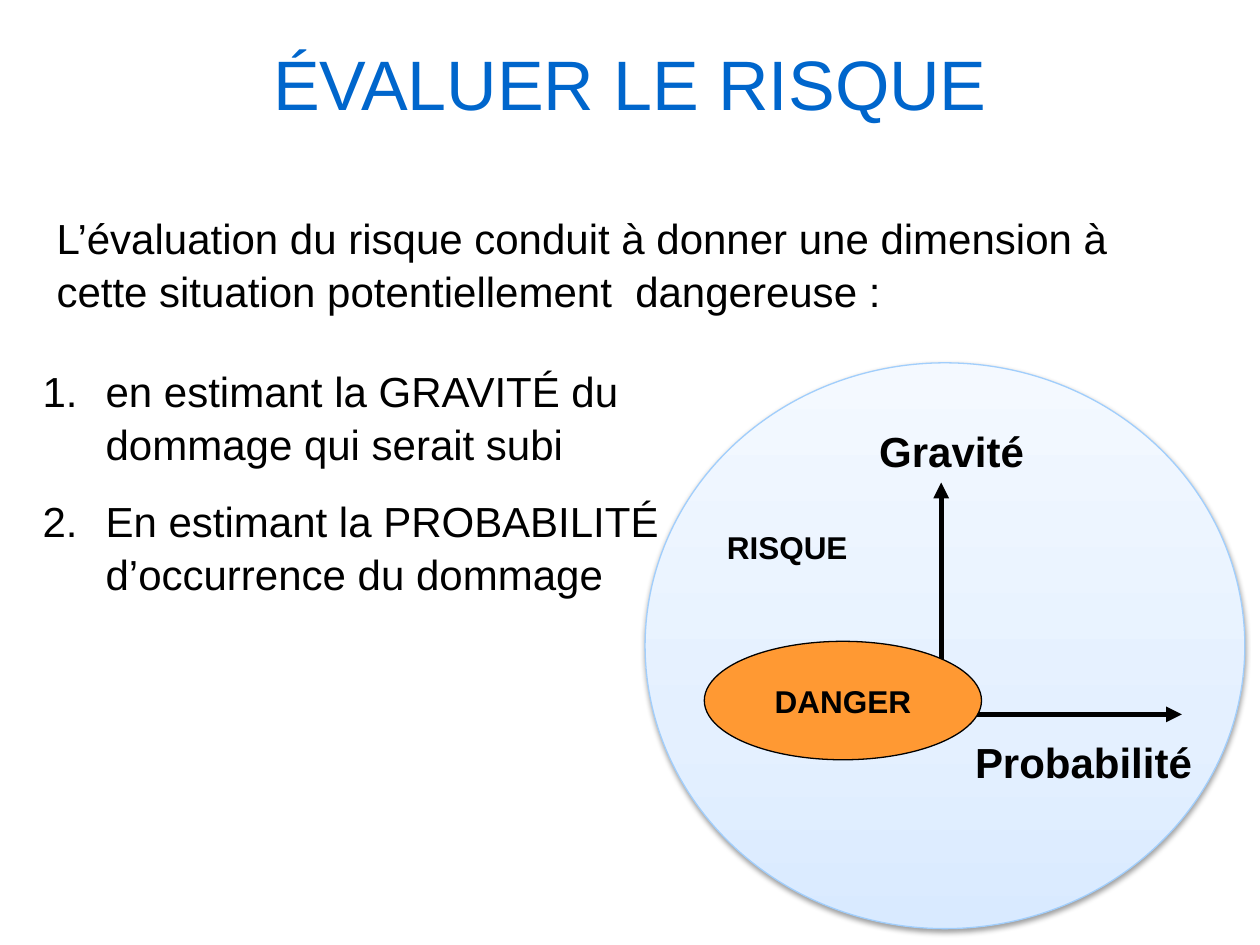
from lxml.etree import SubElement
from pptx import Presentation
from pptx.dml.color import RGBColor
from pptx.enum.shapes import MSO_CONNECTOR, MSO_SHAPE
from pptx.enum.text import MSO_ANCHOR, PP_ALIGN
from pptx.oxml import parse_xml
from pptx.oxml.ns import nsdecls, qn
from pptx.util import Inches, Pt


def color(code):
    return RGBColor.from_string(code)


class Deck:
    font = "Arial"
    ink = "000000"

    def __init__(self, slide):
        self.slide = slide

    def style(self, frame, lines, size, tint=ink, bold=False, align=PP_ALIGN.LEFT, space=1):
        frame.text = "\n".join(lines)
        for para in frame.paragraphs:
            para.alignment = align
            para.line_spacing = space
            for run in para.runs:
                run.font.name = self.font
                run.font.size = Pt(size)
                run.font.bold = bold
                run.font.color.rgb = color(tint)

    def text(self, box, lines, size, wrap=True, anchor=MSO_ANCHOR.TOP, **look):
        frame = self.slide.shapes.add_textbox(*map(Inches, box)).text_frame
        frame.word_wrap = wrap
        frame.vertical_anchor = anchor
        self.style(frame, lines, size, **look)
        return frame

    def label(self, box, word, size):
        self.text(box, [word], size, wrap=False, bold=True)

    def steps(self, box, lines, size, gap, space):
        frame = self.text(box, lines, size, space=space)
        for index, para in enumerate(frame.paragraphs):
            if index:
                para.space_before = Pt(gap)
            props = para._p.get_or_add_pPr()
            props.set("marL", str(Inches(0.5)))
            props.set("indent", str(-Inches(0.5)))
            SubElement(props, qn("a:buFont"), typeface=self.font)
            SubElement(props, qn("a:buAutoNum"), type="arabicPeriod")

    def oval(self, box, edge):
        shape = self.slide.shapes.add_shape(MSO_SHAPE.OVAL, *map(Inches, box))
        shape.shadow.inherit = False
        shape.line.color.rgb = color(edge)
        shape.line.width = Pt(0.75)
        return shape

    def zone(self, box, edge, stops):
        shape = self.oval(box, edge)
        marks = "".join(
            f'<a:gs pos="{place * 1000}"><a:srgbClr val="{code}"/></a:gs>'
            for place, code in stops
        )
        fill = parse_xml(
            f'<a:gradFill {nsdecls("a")} rotWithShape="1"><a:gsLst>{marks}</a:gsLst>'
            '<a:lin ang="16200000" scaled="0"/></a:gradFill>'
        )
        props = shape._element.spPr
        props.find(qn("a:prstGeom")).addnext(fill)
        shade = SubElement(
            props.find(qn("a:effectLst")), qn("a:outerShdw"),
            blurRad=str(Pt(3.1)), dist=str(Pt(1.6)), dir="5400000", rotWithShape="0",
        )
        tone = SubElement(shade, qn("a:srgbClr"), val=self.ink)
        SubElement(tone, qn("a:alpha"), val="38000")

    def badge(self, box, word, size, tint):
        shape = self.oval(box, self.ink)
        shape.fill.solid()
        shape.fill.fore_color.rgb = color(tint)
        frame = shape.text_frame
        frame.word_wrap = False
        frame.vertical_anchor = MSO_ANCHOR.MIDDLE
        self.style(frame, [word], size, bold=True, align=PP_ALIGN.CENTER)

    def arrow(self, start, end):
        link = self.slide.shapes.add_connector(
            MSO_CONNECTOR.STRAIGHT, *map(Inches, start + end)
        )
        link.line.color.rgb = color(self.ink)
        link.line.width = Pt(3)
        props = link._element.spPr
        SubElement(props.find(qn("a:ln")), qn("a:tailEnd"), type="triangle")
        SubElement(props, qn("a:effectLst"))


def main():
    show = Presentation()
    show.slide_width, show.slide_height = Inches(10), Inches(7.5)
    deck = Deck(show.slides.add_slide(show.slide_layouts[6]))

    deck.text((0.5, 0.08, 9, 1.15), ["ÉVALUER LE RISQUE"], 40, tint="0066CC",
              anchor=MSO_ANCHOR.MIDDLE, align=PP_ALIGN.CENTER)
    deck.text((0.35, 1.62, 9.19, 0.91), [
        "L’évaluation du risque conduit à donner une dimension à "
        "cette situation potentiellement  dangereuse :"
    ], 24, space=1.05)

    deck.zone((5.12, 2.88, 4.76, 4.49), "A1CEFC",
              [(0, "D9EAFF"), (35, "E4F0FF"), (100, "F4F9FF")])
    origin = (7.47, 5.67)
    for tip in ((7.47, 3.83), (9.38, 5.67)):
        deck.arrow(origin, tip)
    deck.label((6.88, 3.33, 1.36, 0.5), "Gravité", 24)
    deck.label((7.64, 5.8, 1.94, 0.5), "Probabilité", 24)
    deck.badge((5.59, 5.09, 2.2, 0.94), "DANGER", 18, "FF9933")
    deck.label((5.67, 4.14, 1.19, 0.4), "RISQUE", 18)

    deck.steps((0.24, 2.83, 5.16, 1.92), [
        "en estimant la GRAVITÉ du dommage qui serait subi",
        "En estimant la PROBABILITÉ d’occurrence du dommage",
    ], 24, 14, 1.05)
    show.save("out.pptx")


if __name__ == "__main__":
    main()
